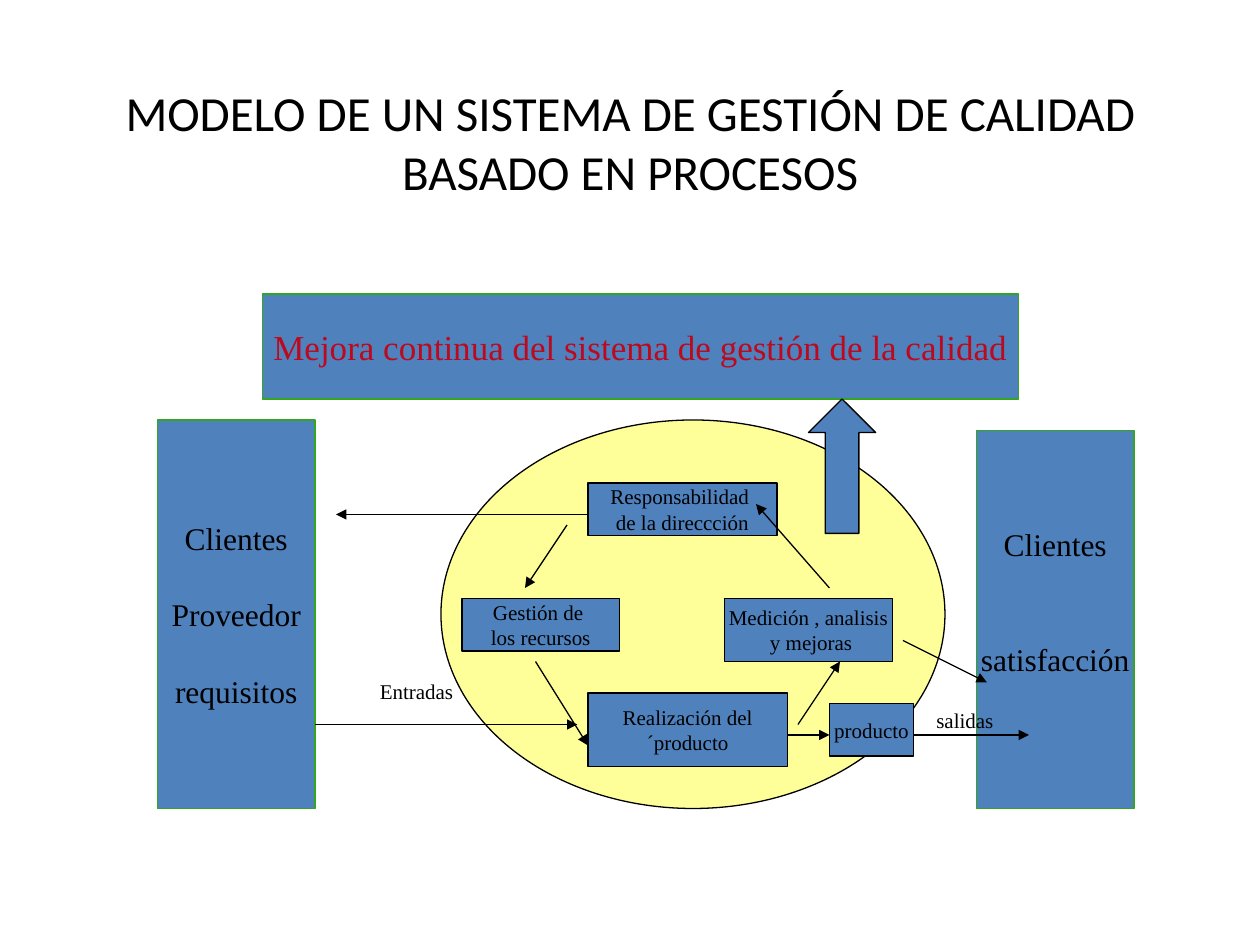
import pptx
import pptx.util
import pptx.dml.color
import pptx.enum.shapes
import pptx.enum.text
import pptx.oxml
import pptx.oxml.ns

RGB = pptx.dml.color.RGBColor
KIND = pptx.enum.shapes.MSO_SHAPE
ALIGN = pptx.enum.text.PP_ALIGN
MIDDLE = pptx.enum.text.MSO_ANCHOR.MIDDLE
Pt = pptx.util.Pt

BLACK = RGB(0x00, 0x00, 0x00)
BLUE = RGB(0x4F, 0x81, 0xBD)
YELLOW = RGB(0xFF, 0xFF, 0x99)
GREEN = RGB(0x34, 0xA5, 0x21)
RED = RGB(0xBD, 0x09, 0x1E)

SERIF = "Times New Roman"
CELLS = 12
SMALL = {"name": SERIF, "size": Pt(12)}
LARGE = {"name": SERIF, "size": Pt(18)}
HEAD = {"name": SERIF, "size": Pt(20)}
TITLE = {"name": "Calibri", "size": Pt(28)}

STEPS = [
    ((56, 46, 18, 5), KIND.FLOWCHART_PROCESS, ["Responsabilidad ", "de la direccción"]),
    ((44, 57, 15, 5), KIND.RECTANGLE, ["Gestión de ", "los recursos"]),
    ((69, 57, 16, 6), KIND.RECTANGLE, ["Medición , analisis", " y mejoras"]),
    ((56, 66, 19, 7), KIND.RECTANGLE, ["Realización del", "´producto"]),
]
INNER = [
    (54, 50, 50, 56),
    (51, 63, 56, 71),
    (76, 69, 80, 63),
    (79, 56, 72, 48),
]
OUTER = [
    (86, 61, 94, 65),
    (30, 69, 55, 69),
    (56, 49, 32, 49),
    (87, 70, 98, 70),
    (75, 70, 79, 70),
]


def grid(*cells):
    """Turn grid columns and rows into lengths."""
    return [pptx.util.Inches(cell / CELLS) for cell in cells]


def assign(target, values):
    """Set each attribute named in a dict."""
    for name, value in values.items():
        setattr(target, name, value)


def write(frame, lines, font, color=BLACK, align=ALIGN.CENTER, gap=0):
    """Fill a text frame with evenly spaced paragraphs."""
    for index, line in enumerate(lines):
        para = frame.add_paragraph() if index else frame.paragraphs[0]
        assign(para, {"alignment": align, "space_before": Pt(gap if index else 0)})
        run = para.add_run()
        run.text = line
        assign(run.font, font)
        run.font.color.rgb = color


def block(slide, area, kind=KIND.RECTANGLE, fill=BLUE, edge=BLACK):
    """Draw a filled and outlined shape."""
    shape = slide.shapes.add_shape(kind, *grid(*area))
    shape.shadow.inherit = False
    shape.fill.solid()
    shape.fill.fore_color.rgb = fill
    shape.line.color.rgb = edge
    shape.line.width = Pt(0.75)
    return shape


def box(slide, area, lines, font, kind=KIND.RECTANGLE, edge=BLACK, color=BLACK, gap=0, foot=3.6):
    """Draw a block with centred text."""
    frame = block(slide, area, kind, edge=edge).text_frame
    assign(frame, {"word_wrap": False, "vertical_anchor": MIDDLE, "margin_bottom": Pt(foot)})
    write(frame, lines, font, color, gap=gap)


def arrow(slide, ends):
    """Draw a line with a triangle at its end."""
    line = slide.shapes.add_connector(pptx.enum.shapes.MSO_CONNECTOR.STRAIGHT, *grid(*ends))
    line.line.color.rgb = BLACK
    line.line.width = Pt(0.75)
    tail = pptx.oxml.ns.qn("a:tailEnd")
    line.line._get_or_add_ln().makeelement(tail)
    pptx.oxml.xmlchemy.OxmlElement("a:tailEnd")
    end = pptx.oxml.xmlchemy.OxmlElement("a:tailEnd")
    end.set("type", "triangle")
    line.line._get_or_add_ln().append(end)
    line._element.spPr.append(pptx.oxml.xmlchemy.OxmlElement("a:effectLst"))


def label(slide, area, text):
    """Place a short left-aligned note."""
    frame = slide.shapes.add_textbox(*grid(*area)).text_frame
    frame.word_wrap = True
    write(frame, [text], SMALL, align=ALIGN.LEFT)


def head(slide, area, text):
    """Move and fill the title."""
    title = slide.shapes.title
    assign(title, dict(zip(("left", "top", "width", "height"), grid(*area))))
    title.text_frame.vertical_anchor = MIDDLE
    write(title.text_frame, [text], TITLE)


def main():
    """Build the quality model slide."""
    deck = pptx.Presentation()
    deck.slide_width, deck.slide_height = grid(120, 90)
    slide = deck.slides.add_slide(deck.slide_layouts[5])
    head(slide, (9, 6, 102, 15), "MODELO DE UN SISTEMA DE GESTIÓN DE CALIDAD BASADO EN PROCESOS")
    block(slide, (42, 40, 48, 37), KIND.OVAL, YELLOW)
    box(slide, (15, 40, 15, 37), ["Clientes", "Proveedor", "requisitos"], LARGE, edge=GREEN, gap=22)
    box(slide, (93, 41, 15, 36), ["Clientes", "satisfacción"], LARGE, edge=GREEN, gap=44, foot=24)
    box(slide, (25, 28, 72, 10), ["Mejora continua del sistema de gestión de la calidad"],
        HEAD, edge=GREEN, color=RED)
    for area, kind, lines in STEPS:
        box(slide, area, lines, SMALL, kind)
    for ends in INNER:
        arrow(slide, ends)
    block(slide, (77, 38, 6.4, 12.8), KIND.UP_ARROW)
    for ends in OUTER:
        arrow(slide, ends)
    label(slide, (35, 64, 13, 3.6), "Entradas")
    label(slide, (88, 66.8, 11, 3.6), "salidas")
    box(slide, (79, 67, 8, 5), ["producto"], SMALL)
    deck.save("out.pptx")


if __name__ == "__main__":
    main()
